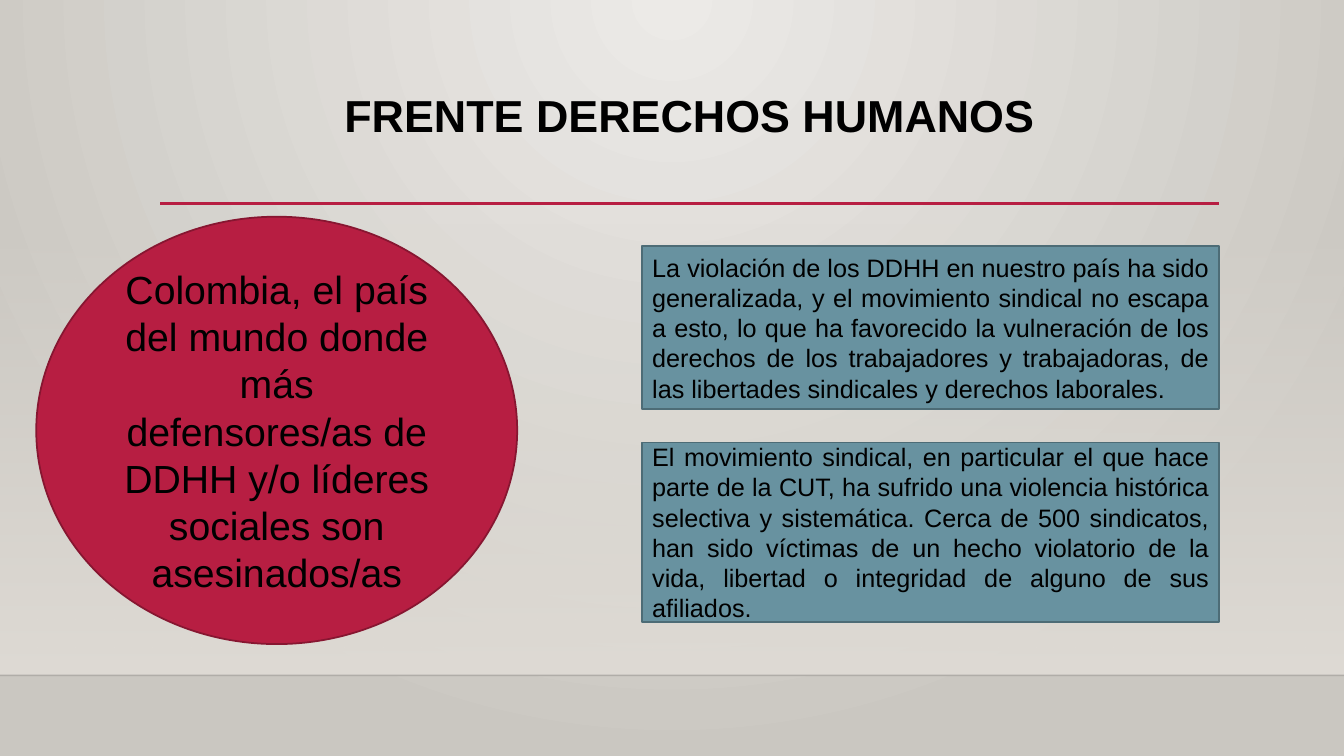
from lxml import etree
from pptx import Presentation
from pptx.dml.color import RGBColor
from pptx.enum.shapes import MSO_CONNECTOR, MSO_SHAPE
from pptx.enum.text import MSO_ANCHOR, MSO_AUTO_SIZE, PP_ALIGN
from pptx.oxml.ns import qn
from pptx.util import Inches, Pt

RECT, OVAL = MSO_SHAPE.RECTANGLE, MSO_SHAPE.OVAL
CENTER, JUSTIFY = PP_ALIGN.CENTER, PP_ALIGN.JUSTIFY

# Content
TITLE = "FRENTE DERECHOS HUMANOS"
CLAIM = ("Colombia, el país del mundo donde más defensores/as de DDHH y/o "
         "líderes sociales son asesinados/as")
FACTS = [  # text, box height
    ("La violación de los DDHH en nuestro país ha sido generalizada, y el "
     "movimiento sindical no escapa a esto, lo que ha favorecido la vulneración "
     "de los derechos de los trabajadores y trabajadoras, de las libertades "
     "sindicales y derechos laborales.", 1.62),
    ("El movimiento sindical, en particular el que hace parte de la CUT, ha "
     "sufrido una violencia histórica selectiva y sistemática. Cerca de 500 "
     "sindicatos, han sido víctimas de un hecho violatorio de la vida, libertad "
     "o integridad de alguno de sus afiliados.", 1.78),
]


class Theme:
    font, text = "Arial", "000000"
    glow, edge, haze = "ECEAE7", "CAC7C1", "DFDBD5"
    claim, claim_line = "B71E42", "871631"
    fact, fact_line = "6892A0", "4D6C76"
    title_size, claim_size, fact_size = 32, 28, 18
    outline, rule, floor = 1.25, 2.5, 1


# Layout, in inches
WIDTH, HEIGHT = 13.33, 7.5
LEFT, RIGHT = 1.59, 12.09
TITLE_TOP, RULE_Y = 0.88, 2.02
HAZE_TOP, FLOOR_Y = 2.21, 6.7
CLAIM_BOX = (0.36, 2.15, 4.77, 4.24)
FACT_LEFT, FACT_TOP, FACT_GAP = 6.37, 2.44, 0.33


def rgb(value):
    return RGBColor.from_string(value)


def set_alpha(color_element, percent):
    etree.SubElement(color_element, qn("a:alpha")).set("val", str(percent * 1000))


def paint_gradient(fill, owner, colors):
    """Apply a two-stop gradient and return its XML without a direction."""
    fill.gradient()
    for stop, color in zip(fill.gradient_stops, colors):
        stop.color.rgb = rgb(color)
    for position, stop in enumerate(fill.gradient_stops):
        stop.position = position
    gradient = next(owner.iter(qn("a:gradFill")))
    gradient.remove(gradient.find(qn("a:lin")))
    return gradient


def add_rule(x1, x2, y, color, width):
    rule = slide.shapes.add_connector(
        MSO_CONNECTOR.STRAIGHT, Inches(x1), Inches(y), Inches(x2), Inches(y))
    rule.line.color.rgb = rgb(color)
    rule.line.width = Pt(width)
    etree.SubElement(rule._element.spPr, qn("a:effectLst"))
    return rule


def add_plain(kind, box):
    shape = slide.shapes.add_shape(kind, *map(Inches, box))
    shape.shadow.inherit = False
    return shape


def write(frame, text, size, align, bold=False):
    frame.text = text
    frame.word_wrap = True
    frame.auto_size = MSO_AUTO_SIZE.NONE
    paragraph = frame.paragraphs[0]
    paragraph.alignment = align
    font = paragraph.runs[0].font
    font.name, font.size, font.bold = Theme.font, Pt(size), bold
    font.color.rgb = rgb(Theme.text)
    return paragraph


def add_panel(kind, box, text, size, align, fill, outline):
    panel = add_plain(kind, box)
    panel.fill.solid()
    panel.fill.fore_color.rgb = rgb(fill)
    panel.line.color.rgb = rgb(outline)
    panel.line.width = Pt(Theme.outline)
    panel.text_frame.vertical_anchor = MSO_ANCHOR.MIDDLE
    write(panel.text_frame, text, size, align)


deck = Presentation()
deck.slide_width, deck.slide_height = Inches(WIDTH), Inches(HEIGHT)
slide = deck.slides.add_slide(deck.slide_layouts[5])

# Background: glow from the top centre
glow = paint_gradient(slide.background.fill, slide._element, (Theme.glow, Theme.edge))
glow_path = etree.SubElement(glow, qn("a:path"))
glow_path.set("path", "circle")
focus = etree.SubElement(glow_path, qn("a:fillToRect"))
for side, share in zip("ltrb", (43, 0, 43, 100)):
    focus.set(side, str(share * 1000))

# Haze that thickens down to the floor line
haze = add_plain(RECT, (0, HAZE_TOP, WIDTH, FLOOR_Y - HAZE_TOP))
haze.line.fill.background()
fade = paint_gradient(haze.fill, haze._element, (Theme.haze, Theme.haze))
etree.SubElement(fade, qn("a:lin")).set("ang", str(90 * 60000))
set_alpha(next(fade.iter(qn("a:srgbClr"))), 0)

# Floor line and title rule
floor = add_rule(0, WIDTH, FLOOR_Y, Theme.text, Theme.floor)
set_alpha(next(floor._element.iter(qn("a:srgbClr"))), 20)
add_rule(LEFT, RIGHT, RULE_Y, Theme.claim, Theme.rule)

# Title, brought in front of the backdrop
title = slide.shapes.title
slide.shapes._spTree.append(title._element)
title.left, title.top = Inches(LEFT), Inches(TITLE_TOP)
title.width, title.height = Inches(RIGHT - LEFT), Inches(1.15)
title.text_frame.vertical_anchor = MSO_ANCHOR.TOP
write(title.text_frame, TITLE, Theme.title_size, CENTER, bold=True).line_spacing = 0.9

# Claim and supporting facts
add_panel(OVAL, CLAIM_BOX, CLAIM, Theme.claim_size, CENTER,
          Theme.claim, Theme.claim_line)
top = FACT_TOP
for fact, height in FACTS:
    add_panel(RECT, (FACT_LEFT, top, RIGHT - FACT_LEFT, height), fact,
              Theme.fact_size, JUSTIFY, Theme.fact, Theme.fact_line)
    top += height + FACT_GAP

deck.save("out.pptx")
